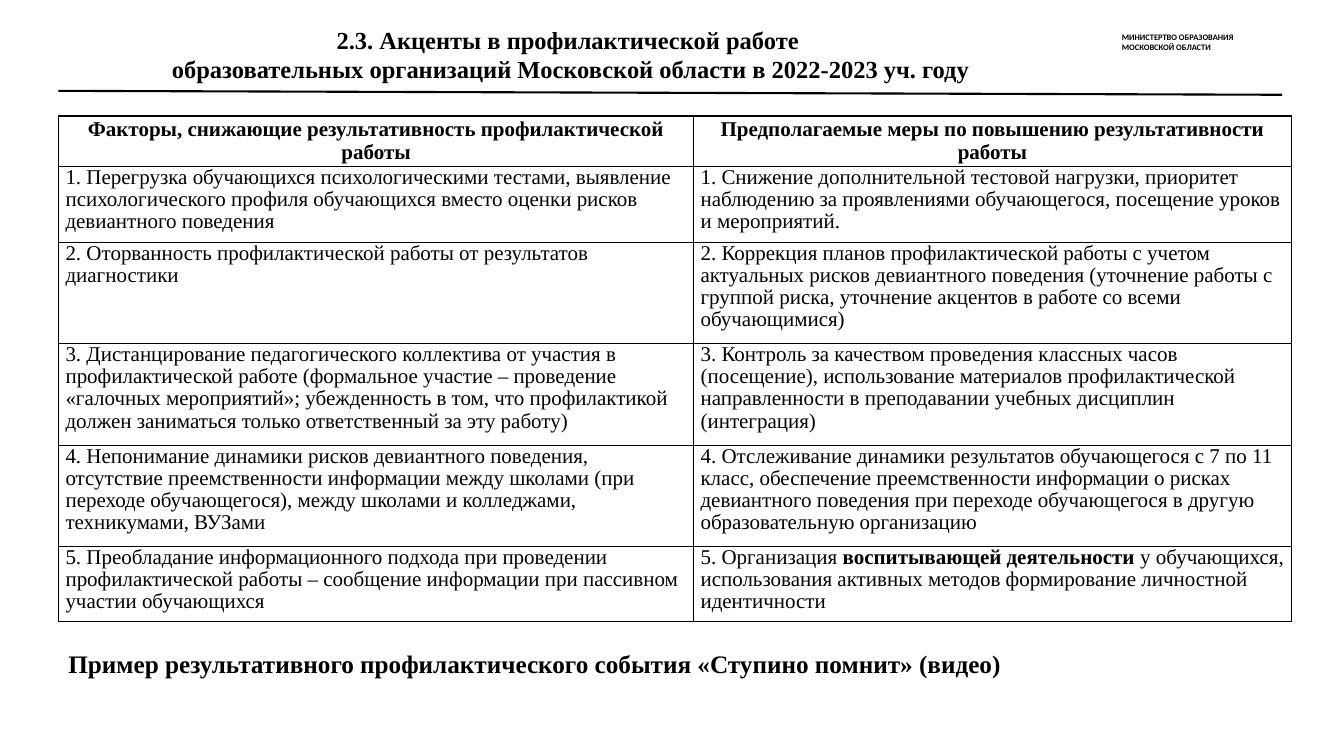
from dataclasses import dataclass

from lxml import etree
from pptx import Presentation
from pptx.dml.color import RGBColor
from pptx.enum.shapes import MSO_CONNECTOR
from pptx.enum.text import MSO_ANCHOR, MSO_AUTO_SIZE, PP_ALIGN
from pptx.oxml.ns import qn
from pptx.util import Pt

LEFT, CENTER = PP_ALIGN.LEFT, PP_ALIGN.CENTER
TOP, MIDDLE = MSO_ANCHOR.TOP, MSO_ANCHOR.MIDDLE
GROW = MSO_AUTO_SIZE.SHAPE_TO_FIT_TEXT
STRAIGHT = MSO_CONNECTOR.STRAIGHT


@dataclass(frozen=True)
class Theme:
    ink: str = "000000"
    serif: str = "Times New Roman"
    sans: str = "Calibri"
    ministry: float = 6
    title: float = 17.5
    table: float = 15
    example: float = 18
    rule: float = 1.5
    border: float = 1


@dataclass(frozen=True)
class TextBox:
    left: float
    top: float
    width: float
    height: float
    lines: tuple[str, ...]
    size: float
    font: str
    align: PP_ALIGN = LEFT
    wrap: bool = True


@dataclass(frozen=True)
class Row:
    height: float
    factor: str
    measure: str


THEME = Theme()
MARGIN = 41.8
TABLE_TOP = 82.8
COLUMNS = (453.6, 427)

BOXES = (
    TextBox(794.2, 19.4, 95, 21.6,
            ("МИНИСТЕРТВО ОБРАЗОВАНИЯ", "МОСКОВСКОЙ ОБЛАСТИ"),
            THEME.ministry, THEME.sans, wrap=False),
    TextBox(MARGIN, 14.4, 727.9, 49.7,
            ("2.3. Акценты в профилактической работе",
             " образовательных организаций Московской области в 2022-2023 уч. году"),
            THEME.title, THEME.serif, CENTER),
    TextBox(MARGIN, 459.4, 856, 28.8,
            ("Пример результативного профилактического события «Ступино помнит» (видео)",),
            THEME.example, THEME.serif),
)

ROWS = (
    Row(35.7, "Факторы, снижающие результативность профилактической работы",
        "Предполагаемые меры по повышению результативности работы"),
    Row(54.3, "1. Перегрузка обучающихся психологическими тестами, выявление психологического "
        "профиля обучающихся вместо оценки рисков девиантного поведения",
        "1. Снижение дополнительной тестовой нагрузки, приоритет наблюдению за проявлениями "
        "обучающегося, посещение уроков и мероприятий."),
    Row(72.3, "2. Оторванность профилактической работы от результатов диагностики",
        "2. Коррекция планов профилактической работы с учетом актуальных рисков девиантного "
        "поведения (уточнение работы с группой риска, уточнение акцентов в работе со всеми "
        "обучающимися)"),
    Row(72.6, "3. Дистанцирование педагогического коллектива от участия в профилактической работе "
        "(формальное участие – проведение «галочных мероприятий»; убежденность в том, что "
        "профилактикой должен заниматься только ответственный за эту работу)",
        "3. Контроль за качеством проведения классных часов (посещение), использование материалов "
        "профилактической направленности в преподавании учебных дисциплин (интеграция)"),
    Row(72.3, "4. Непонимание динамики рисков девиантного поведения, отсутствие преемственности "
        "информации между школами (при переходе обучающегося), между школами и колледжами, "
        "техникумами, ВУЗами",
        "4. Отслеживание динамики результатов обучающегося с 7 по 11 класс, обеспечение "
        "преемственности информации о рисках девиантного поведения при переходе обучающегося "
        "в другую образовательную организацию"),
    Row(53.6, "5. Преобладание информационного подхода при проведении профилактической работы – "
        "сообщение информации при пассивном участии обучающихся",
        "5. Организация **воспитывающей деятельности** у обучающихся, использования активных "
        "методов формирование личностной идентичности"),
)


def write(tf, lines: tuple[str, ...], *, size: float, font: str, bold: bool = True,
          align: PP_ALIGN = LEFT, spacing: float = 1.0) -> None:
    """Write each line as a paragraph, with **marked** parts in bold."""
    for i, line in enumerate(lines):
        p = tf.paragraphs[0] if i == 0 else tf.add_paragraph()
        p.alignment = align
        p.line_spacing = spacing
        for j, part in enumerate(line.split("**")):
            r = p.add_run()
            r.text = part
            r.font.name = font
            r.font.size = Pt(size)
            r.font.bold = bold or j % 2 == 1
            r.font.color.rgb = RGBColor.from_string(THEME.ink)


def add_box(s, box: TextBox) -> None:
    """Add a text box that grows with its text."""
    sp = s.shapes.add_textbox(Pt(box.left), Pt(box.top), Pt(box.width), Pt(box.height))
    tf = sp.text_frame
    tf.word_wrap = box.wrap
    tf.auto_size = GROW
    write(tf, box.lines, size=box.size, font=box.font, align=box.align)


def add_rule(s) -> None:
    """Add the line under the title."""
    line = s.shapes.add_connector(STRAIGHT, Pt(MARGIN), Pt(64.9), Pt(915.8), Pt(67.7))
    line.line.color.rgb = RGBColor.from_string(THEME.ink)
    line.line.width = Pt(THEME.rule)
    etree.SubElement(line._element.spPr, qn("a:effectLst"))


def add_borders(cell) -> None:
    """Give a cell a solid border on all four sides."""
    tc_pr = cell._tc.get_or_add_tcPr()
    for i, side in enumerate(("lnL", "lnR", "lnT", "lnB")):
        ln = etree.Element(qn(f"a:{side}"), w=str(Pt(THEME.border)))
        fill = etree.SubElement(ln, qn("a:solidFill"))
        etree.SubElement(fill, qn("a:srgbClr"), val=THEME.ink)
        tc_pr.insert(i, ln)


def add_table(s, rows: tuple[Row, ...]) -> None:
    """Add the table of factors and measures."""
    height = sum(row.height for row in rows)
    table = s.shapes.add_table(len(rows), len(COLUMNS), Pt(MARGIN), Pt(TABLE_TOP),
                               Pt(sum(COLUMNS)), Pt(height)).table
    table.horz_banding = False
    table.first_row = False
    for column, width in zip(table.columns, COLUMNS):
        column.width = Pt(width)
    for i, row in enumerate(rows):
        header = i == 0
        table.rows[i].height = Pt(row.height)
        for j, text in enumerate((row.factor, row.measure)):
            cell = table.cell(i, j)
            cell.fill.background()
            cell.margin_left = cell.margin_right = Pt(5)
            cell.margin_top = cell.margin_bottom = Pt(0)
            cell.vertical_anchor = MIDDLE if header else TOP
            add_borders(cell)
            write(cell.text_frame, (text,), size=THEME.table, font=THEME.serif, bold=header,
                  align=CENTER if header else LEFT, spacing=1.0 if header else 0.96)


def main() -> None:
    """Build and save the slide."""
    prs = Presentation()
    prs.slide_width, prs.slide_height = Pt(960), Pt(540)
    s = prs.slides.add_slide(prs.slide_layouts[6])
    for box in BOXES:
        add_box(s, box)
    add_rule(s)
    add_table(s, ROWS)
    prs.save("out.pptx")


if __name__ == "__main__":
    main()
